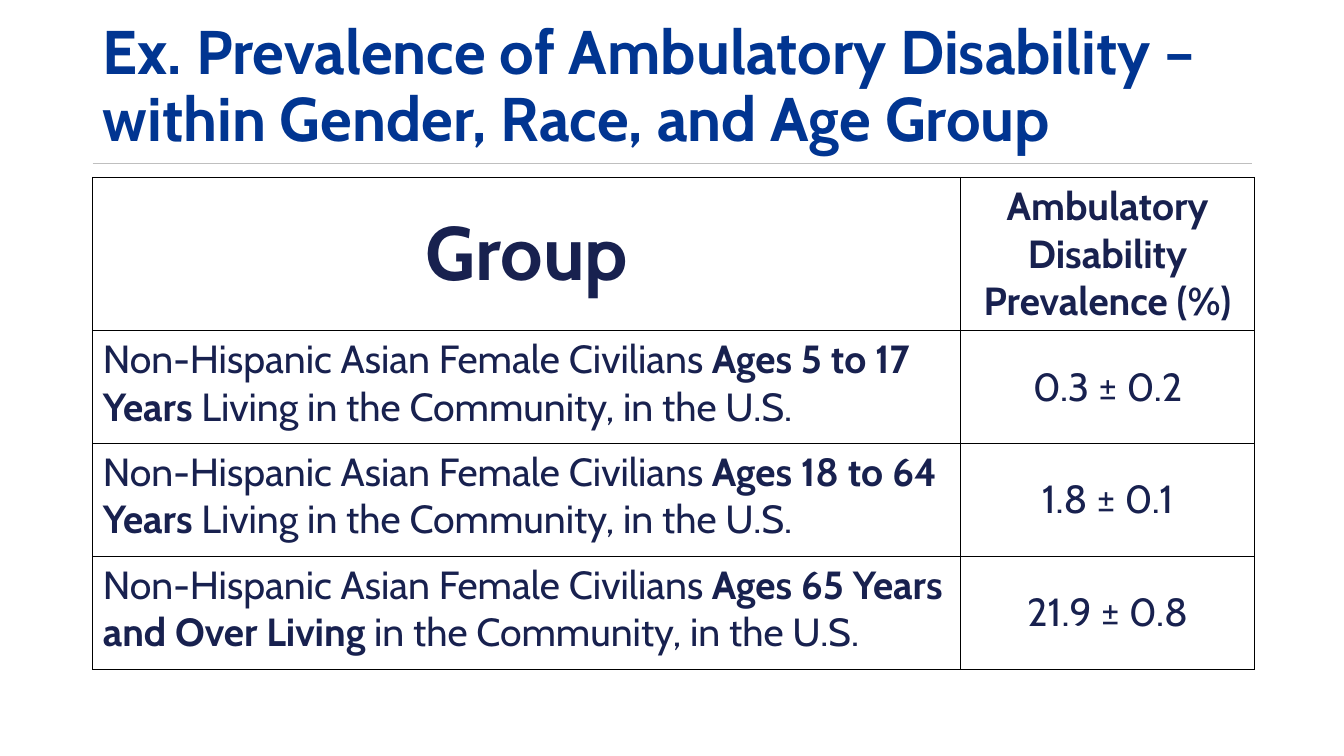
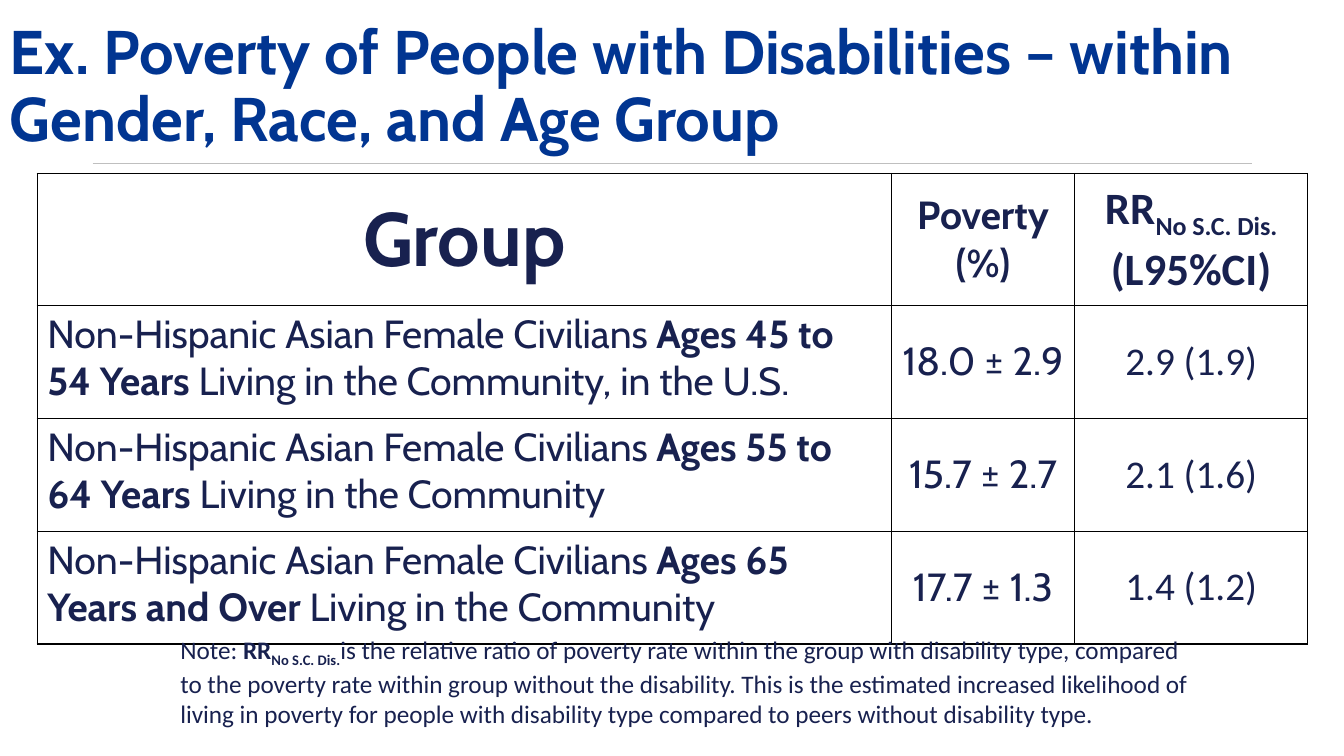
from lxml import etree
from pptx import Presentation
from pptx.dml.color import RGBColor
from pptx.enum.text import MSO_ANCHOR as Anchor, PP_ALIGN as Align
from pptx.oxml.ns import qn
from pptx.util import Inches, Pt

TITLE_BLUE, TEXT_NAVY, RULE_GRAY, BORDER = "013591", "18214F", "BFBFBF", "000000"
TITLE_FONT, NOTE_FONT = "Cabin", "Calibri"
SLIDE_WIDTH, SLIDE_HEIGHT = 13.33, 7.5
BODY_ROW_HEIGHT = 1.12
CIVILIANS = "Non-Hispanic Asian Female Civilians "
IN_COMMUNITY = "Living in the Community"


def color(hex_string):
    return RGBColor.from_string(hex_string)


def add_text(paragraph, text, size=28, font=TITLE_FONT, fill=TEXT_NAVY,
             bold=False, subscript=False):
    run = paragraph.add_run()
    run.text = text
    run.font.size = Pt(size)
    run.font.name = font
    run.font.bold = bold
    run.font.color.rgb = color(fill)
    if subscript:
        run._r.get_or_add_rPr().set("baseline", "-25000")


def add_text_box(slide, left, top, width, height, anchor=Anchor.TOP):
    """Add a wrapping text box and return its first paragraph."""
    box = slide.shapes.add_textbox(
        Inches(left), Inches(top), Inches(width), Inches(height))
    frame = box.text_frame
    frame.word_wrap = True
    frame.vertical_anchor = anchor
    return frame.paragraphs[0]


def add_rule(slide):
    """Draw the thin line under the title."""
    rule = slide.shapes.add_connector(
        1, Inches(0.92), Inches(1.62), Inches(12.42), Inches(1.62))
    rule.line.color.rgb = color(RULE_GRAY)
    rule.line.width = Pt(1)
    etree.SubElement(rule._element.spPr, qn("a:effectLst"))


def add_titled_slide(presentation, title, left, width):
    slide = presentation.slides.add_slide(presentation.slide_layouts[6])
    add_rule(slide)
    paragraph = add_text_box(slide, left, 0.63, width, 0.95, Anchor.BOTTOM)
    paragraph.line_spacing = 0.9
    add_text(paragraph, title, size=44, fill=TITLE_BLUE, bold=True)
    return slide


def set_borders(cell):
    properties = cell._tc.get_or_add_tcPr()
    for position, side in enumerate(("lnL", "lnR", "lnT", "lnB")):
        line = etree.Element(qn(f"a:{side}"), w=str(Pt(1)))
        fill = etree.SubElement(line, qn("a:solidFill"))
        etree.SubElement(fill, qn("a:srgbClr"), val=BORDER)
        properties.insert(position, line)


def fill_cell(cell, runs, centered):
    """Write (text, format) runs into a bordered cell without fill."""
    cell.fill.background()
    set_borders(cell)
    paragraph = cell.text_frame.paragraphs[0]
    if centered:
        cell.vertical_anchor = Anchor.MIDDLE
        paragraph.alignment = Align.CENTER
    for text, style in runs:
        add_text(paragraph, text, **style)


def add_group_table(slide, left, top, widths, header_height, rows):
    """Add a table with a header row and a left-aligned first column."""
    height = header_height + BODY_ROW_HEIGHT * (len(rows) - 1)
    table = slide.shapes.add_table(
        len(rows), len(widths), Inches(left), Inches(top),
        Inches(sum(widths)), Inches(height)).table
    table.first_row = table.horz_banding = False
    for column, width in zip(table.columns, widths):
        column.width = Inches(width)
    for row_index, cells in enumerate(rows):
        is_header = row_index == 0
        table.rows[row_index].height = Inches(
            header_height if is_header else BODY_ROW_HEIGHT)
        for column_index, runs in enumerate(cells):
            fill_cell(table.cell(row_index, column_index), runs,
                      centered=is_header or column_index > 0)


def heading(text, size=28):
    return [(text, {"size": size, "bold": True})]


def group(ages, ending):
    return [(CIVILIANS, {}), (ages, {"bold": True}), (ending, {})]


def value(text, **style):
    return [(text, style)]


def add_prevalence_slide(presentation):
    slide = add_titled_slide(
        presentation,
        "Ex. Prevalence of Ambulatory Disability – within Gender, Race, and Age Group",
        0.92, 11.52)
    ending = f"{IN_COMMUNITY}, in the U.S."
    add_group_table(slide, 0.92, 1.76, (8.61, 2.91), 1.52, [
        [heading("Group", 54), heading("Ambulatory Disability Prevalence (%)")],
        [group("Ages 5 to 17 Years ", ending), value("0.3 ± 0.2")],
        [group("Ages 18 to 64 Years ", ending), value("1.8 ± 0.1")],
        [group("Ages 65 Years and Over Living ", "in the Community, in the U.S."),
         value("21.9 ± 0.8")],
    ])


def add_poverty_slide(presentation):
    slide = add_titled_slide(
        presentation,
        "Ex. Poverty of People with Disabilities – within Gender, Race, and Age Group",
        0, SLIDE_WIDTH)
    ratio_style = {"size": 32, "font": NOTE_FONT, "bold": True}
    ratio_heading = [("RR", ratio_style),
                     ("No S.C. Dis. ", {**ratio_style, "subscript": True}),
                     ("(L95%CI)", ratio_style)]
    body = [
        ("Ages 45 to 54 Years ", f"{IN_COMMUNITY}, in the U.S.", "18.0 ± 2.9", "2.9 (1.9)"),
        ("Ages 55 to 64 Years ", IN_COMMUNITY, "15.7 ± 2.7", "2.1 (1.6)"),
        ("Ages 65 Years and Over ", IN_COMMUNITY, "17.7 ± 1.3", "1.4 (1.2)"),
    ]
    rows = [[heading("Group", 54), heading("Poverty (%)"), ratio_heading]]
    rows += [[group(ages, ending), value(poverty), value(ratio, font=NOTE_FONT)]
             for ages, ending, poverty, ratio in body]
    add_group_table(slide, 0.37, 1.72, (8.47, 1.82, 2.31), 1.31, rows)
    add_note(slide)


def add_note(slide):
    paragraph = add_text_box(slide, 1.69, 6.24, 10.29, 1.01)
    note_style = {"size": 18, "font": NOTE_FONT}
    add_text(paragraph, "Note: ", **note_style)
    add_text(paragraph, "RR", bold=True, **note_style)
    add_text(paragraph, "No S.C. Dis.", bold=True, subscript=True, **note_style)
    add_text(
        paragraph,
        "is the relative ratio of poverty rate within the group with disability type, "
        "compared to the poverty rate within group without the disability. This is the "
        "estimated increased likelihood of living in poverty for people with disability "
        "type compared to peers without disability type.",
        **note_style)


def main():
    presentation = Presentation()
    presentation.slide_width = Inches(SLIDE_WIDTH)
    presentation.slide_height = Inches(SLIDE_HEIGHT)
    add_prevalence_slide(presentation)
    add_poverty_slide(presentation)
    presentation.save("out.pptx")


if __name__ == "__main__":
    main()
